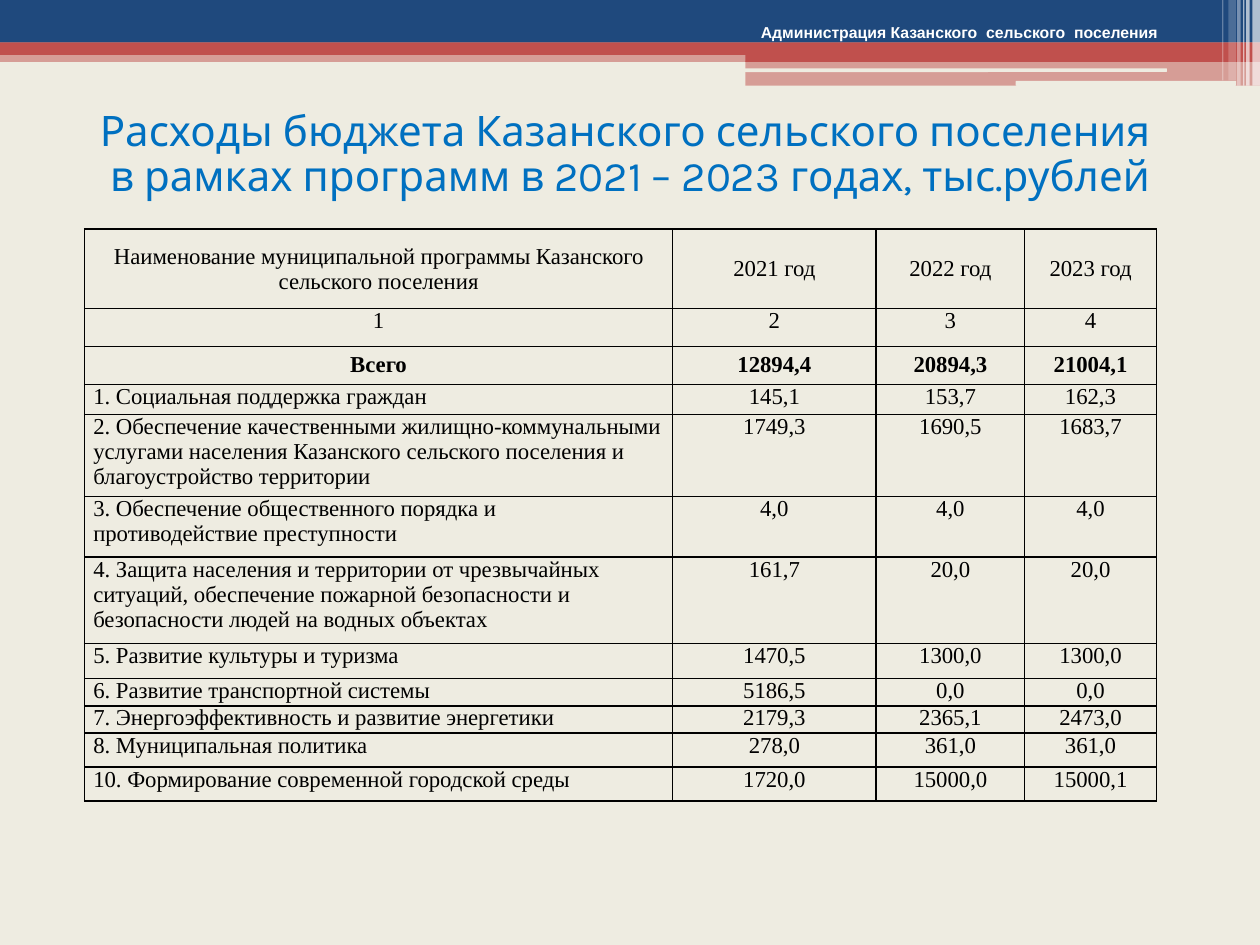
"""Build the slide on programme spending of a rural settlement's budget."""
from lxml.etree import SubElement
from pptx import Presentation
from pptx.dml.color import RGBColor as RGB
from pptx.enum.shapes import MSO_SHAPE as Kind
from pptx.enum.text import MSO_ANCHOR as Anchor, MSO_AUTO_SIZE as Auto, PP_ALIGN as Align
from pptx.oxml import parse_xml
from pptx.oxml.ns import nsdecls, qn
from pptx.util import Pt


def paint(fill, tint, alpha=100):
    fill.solid()
    fill.fore_color.rgb = RGB.from_string(tint)
    if alpha < 100:
        node = fill._xPr.find(qn("a:solidFill"))[0]
        SubElement(node, qn("a:alpha")).set("val", str(alpha * 1000))


def write(para, text, face, size, tint, bold=False):
    run = para.add_run()
    run.text = text
    font = run.font
    font.name, font.size, font.bold = face, Pt(size), bold
    paint(font.fill, tint)


deck = Presentation()
deck.slide_width, deck.slide_height = Pt(720), Pt(540)
slide = deck.slides.add_slide(deck.slide_layouts[5])
paint(slide.background.fill, "EEECE1")

bars = [
    (Kind.RECTANGLE, 0, 28.8, 720, 6.6, "C0504D", 50),
    (Kind.RECTANGLE, 0, 0, 720, 24.4, "1F497D", 100),
    (Kind.RECTANGLE, 0, 24.2, 720, 7.2, "C0504D", 100),
    (Kind.RECTANGLE, 426, 28.2, 294, 7.2, "C0504D", 100),
    (Kind.RECTANGLE, 426, 34.8, 294, 14.2, "C0504D", 50),
    (Kind.ROUNDED_RECTANGLE, 425.6, 39.1, 241.2, 2.1, "EEECE1", 100),
    (Kind.ROUNDED_RECTANGLE, 580.4, 46.2, 126, 2.8, "EEECE1", 100),
]
strips = [
    (715.7, 4.3, 49, 65), (712.1, 2, 49, 65), (710.4, 0.8, 49, 60),
    (707, 2, 49, 40), (702, 4.3, 46, 20), (698.4, 0.8, 46, 30),
]
bars += [(Kind.RECTANGLE, x, 0, w, h, "FFFFFF", a) for x, w, h, a in strips]
for kind, x, y, w, h, tint, alpha in bars:
    bar = slide.shapes.add_shape(kind, Pt(x), Pt(y), Pt(w), Pt(h))
    bar.shadow.inherit = False
    bar.line.fill.background()
    paint(bar.fill, tint, alpha)

title = slide.shapes.title
title.left, title.top, title.width, title.height = Pt(0), Pt(60.5), Pt(720), Pt(56.9)
frame = title.text_frame
frame.auto_size = Auto.NONE
frame.vertical_anchor = Anchor.MIDDLE
para = frame.paragraphs[0]
para.alignment = Align.CENTER
para.line_spacing = 0.9
write(para, "Расходы бюджета Казанского сельского поселения ", "Karla", 24, "0070C0")
para.add_line_break()
write(para, "в рамках программ в 2021 – 2023 годах, тыс.рублей", "Karla", 24, "0070C0")

owner = slide.shapes.add_textbox(Pt(427.7), Pt(9.4), Pt(265), Pt(18))
frame = owner.text_frame
frame.word_wrap = True
frame.auto_size = Auto.SHAPE_TO_FIT_TEXT
write(frame.paragraphs[0], "Администрация Казанского  сельского  поселения", "Arial", 9, "FFFFFF", True)

rows = [
    (45.4, "Наименование муниципальной программы Казанского сельского поселения",
     "2021 год", "2022 год", "2023 год"),
    (21.6, "1", "2", "3", "4"),
    (21.6, "Всего", "12894,4", "20894,3", "21004,1"),
    (17.3, "1. Социальная поддержка граждан", "145,1", "153,7", "162,3"),
    (45.4, "2. Обеспечение качественными жилищно-коммунальными услугами населения "
     "Казанского сельского поселения и благоустройство территории",
     "1749,3", "1690,5", "1683,7"),
    (34.6, "3. Обеспечение общественного порядка и противодействие преступности",
     "4,0", "4,0", "4,0"),
    (49.4, "4. Защита населения и территории от чрезвычайных ситуаций, обеспечение "
     "пожарной безопасности и безопасности людей на водных объектах",
     "161,7", "20,0", "20,0"),
    (20, "5. Развитие культуры и туризма", "1470,5", "1300,0", "1300,0"),
    (15.4, "6. Развитие транспортной системы", "5186,5", "0,0", "0,0"),
    (15.4, "7. Энергоэффективность и развитие энергетики", "2179,3", "2365,1", "2473,0"),
    (19.4, "8. Муниципальная политика", "278,0", "361,0", "361,0"),
    (19.4, "10. Формирование современной городской среды", "1720,0", "15000,0", "15000,1"),
]
widths = [336, 116.4, 84.8, 75.4]
total = sum(row[0] for row in rows)
holder = slide.shapes.add_table(len(rows), len(widths), Pt(48.3), Pt(131), Pt(sum(widths)), Pt(total))
table = holder.table
table.first_row = table.horz_banding = False
for col, width in zip(table.columns, widths):
    col.width = Pt(width)

for i, (height, *texts) in enumerate(rows):
    table.rows[i].height = Pt(height)
    for j, text in enumerate(texts):
        cell = table.cell(i, j)
        cell.margin_left = cell.margin_right = Pt(5)
        cell.margin_top = cell.margin_bottom = Pt(0)
        cell.vertical_anchor = Anchor.MIDDLE if i in (0, 2) else Anchor.TOP
        para = cell.text_frame.paragraphs[0]
        para.alignment = Align.LEFT if i > 2 and j == 0 else Align.CENTER
        write(para, text, "Times New Roman", 13, "000000", i == 2)
        cell.fill.background()
        for n, side in enumerate("LRTB"):
            edge = parse_xml(
                f'<a:ln{side} {nsdecls("a")} w="12700"><a:solidFill>'
                f'<a:srgbClr val="000000"/></a:solidFill></a:ln{side}>')
            cell._tc.get_or_add_tcPr().insert(n, edge)

deck.save("out.pptx")
